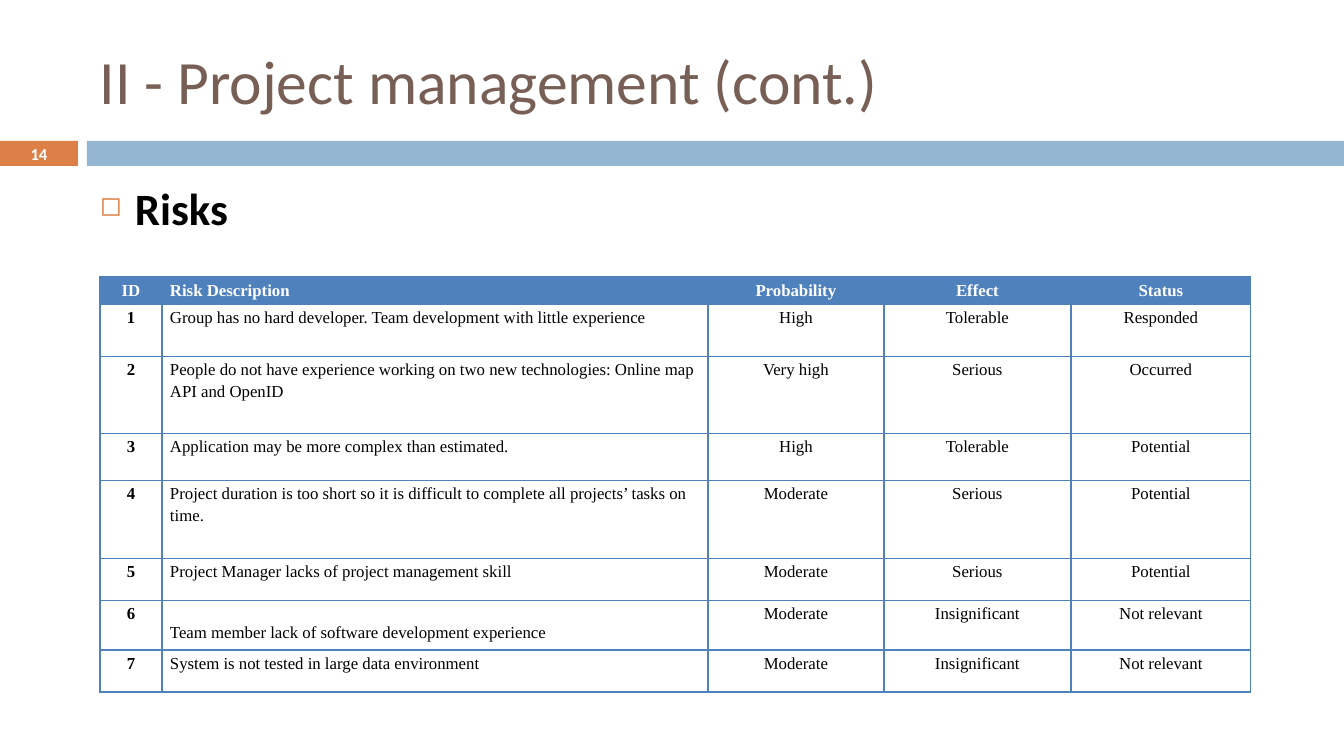
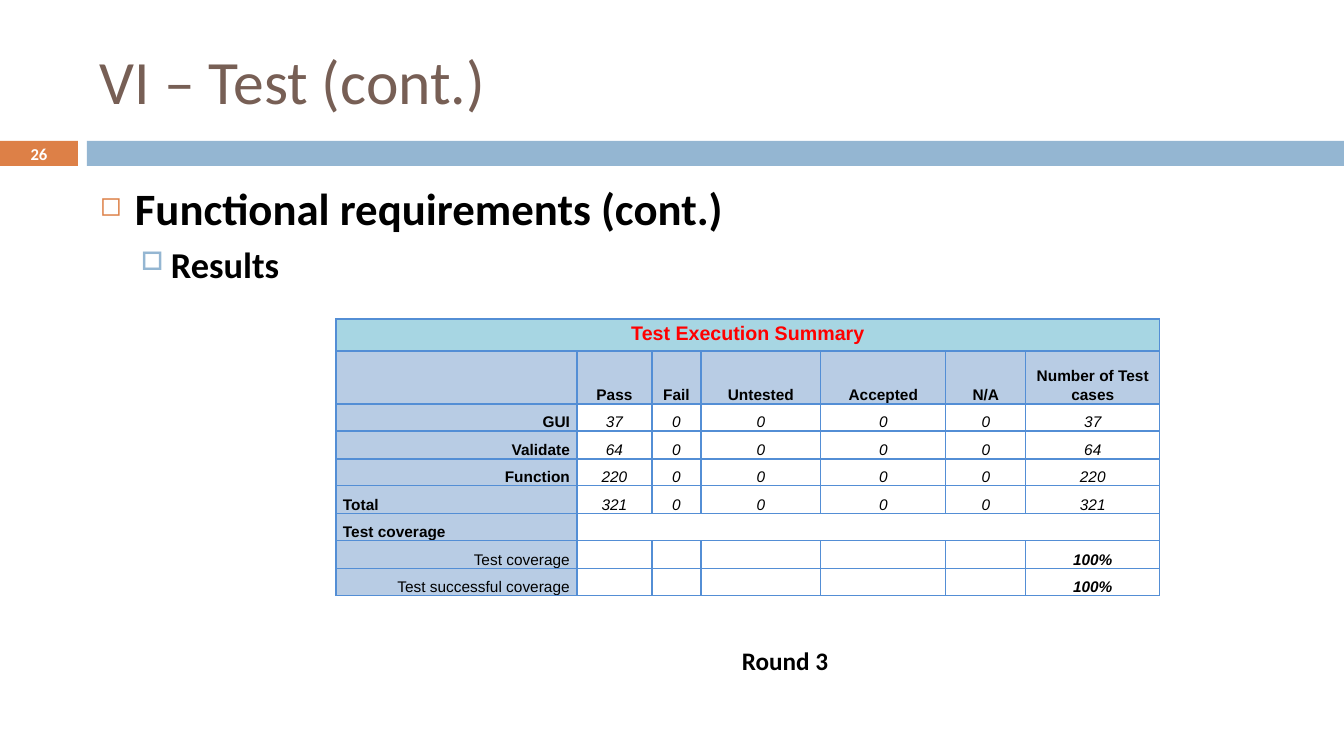
import pptx
import pptx.dml.color
import pptx.enum.shapes
import pptx.enum.text
import pptx.oxml
import pptx.oxml.ns
import pptx.util

EMU_PER_PX = 914400 / 100.8
WIDTH, HEIGHT = 1344, 756
ALIGN = pptx.enum.text.PP_ALIGN
ANCHOR = pptx.enum.text.MSO_ANCHOR

BROWN, ORANGE, BLUE = "775F55", "DD8047", "94B6D2"
BLACK, WHITE, RED = "000000", "FFFFFF", "FF0000"
RISK_BLUE = "4F81BD"
TEST_LINE, TEST_HEAD, TEST_LABEL = "538ED5", "A7D6E3", "B8CCE4"

BAND_TOP, BAND_HEIGHT = 141, 25
NUMBER_WIDTH, BAND_LEFT = 78, 87
TEXT_LEFT, TEXT_WIDTH = 90, 1199

# indent, hanging, space before, bullet, bullet colour, bullet size, text size
BULLETS = [
    (35, 35, 7, "◻", ORANGE, 60, 32),
    (71, 30, 5.5, "□", BLUE, 70, 26),
]

RISKS = [
    ("ID", "Risk Description", "Probability", "Effect", "Status"),
    ("1", "Group has no hard developer. Team development with little experience",
     "High", "Tolerable", "Responded"),
    ("2", "People do not have experience working on two new technologies: "
     "Online map API and OpenID", "Very high", "Serious", "Occurred"),
    ("3", "Application may be more complex than estimated.",
     "High", "Tolerable", "Potential"),
    ("4", "Project duration is too short so it is difficult to complete all "
     "projects’ tasks on time.", "Moderate", "Serious", "Potential"),
    ("5", "Project Manager lacks of project management skill",
     "Moderate", "Serious", "Potential"),
    ("6", "Team member lack of software development experience",
     "Moderate", "Insignificant", "Not relevant"),
    ("7", "System is not tested in large data environment",
     "Moderate", "Insignificant", "Not relevant"),
]
RISK_COLS = [62, 546, 176, 187, 180]
RISK_ROWS = [27, 52, 77, 47, 78, 42, 50, 42]
LOWERED_RISK = 6

TEST_HEADINGS = ["", "Pass", "Fail", "Untested", "Accepted", "N/A",
                 "Number of Test cases"]
# label, label alignment, label bold, values, values bold
TEST_RESULTS = [
    ("GUI", ALIGN.RIGHT, True, ["37", "0", "0", "0", "0", "37"], False),
    ("Validate", ALIGN.RIGHT, True, ["64", "0", "0", "0", "0", "64"], False),
    ("Function", ALIGN.RIGHT, True, ["220", "0", "0", "0", "0", "220"], False),
    ("Total", ALIGN.LEFT, True, ["321", "0", "0", "0", "0", "321"], False),
    ("Test coverage", ALIGN.LEFT, True, [""] * 6, False),
    ("Test coverage", ALIGN.RIGHT, False, [""] * 5 + ["100%"], True),
    ("Test successful coverage", ALIGN.RIGHT, False, [""] * 5 + ["100%"], True),
]
OPEN_RESULT = 4
TEST_COLS = [241, 75, 49, 120, 125, 80, 134]
TEST_ROWS = [32, 53] + [27, 28] * 3 + [27]


def px(n):
    return pptx.util.Emu(round(n * EMU_PER_PX))


def rgb(color):
    return pptx.dml.color.RGBColor.from_string(color)


def set_font(p, size, color, name="Calibri", bold=False, italic=False):
    p.font.size = pptx.util.Pt(size)
    p.font.name = name
    p.font.bold = bold
    p.font.italic = italic
    p.font.color.rgb = rgb(color)


def add_xml(parent, xml):
    head, tail = xml.split(">", 1) if not xml.endswith("/>") else (xml[:-2], "/>")
    end = tail if tail == "/>" else ">" + tail
    parent.append(pptx.oxml.parse_xml(f"{head} {pptx.oxml.ns.nsdecls('a')}{end}"))


def add_band(slide, left, width, color):
    sp = slide.shapes.add_shape(pptx.enum.shapes.MSO_SHAPE.RECTANGLE,
                                px(left), px(BAND_TOP), px(width), px(BAND_HEIGHT))
    sp.shadow.inherit = False
    sp.fill.solid()
    sp.fill.fore_color.rgb = rgb(color)
    sp.line.fill.background()


def add_textbox(slide, left, top, width, height, anchor=ANCHOR.TOP, wrap=True):
    tf = slide.shapes.add_textbox(px(left), px(top), px(width), px(height)).text_frame
    tf.word_wrap = wrap
    tf.vertical_anchor = anchor
    return tf


def add_bullet(p, text, level):
    indent, hanging, before, char, color, percent, size = BULLETS[level]
    p.text = text
    p.level = level
    p.space_before = pptx.util.Pt(before)
    pPr = p._p.get_or_add_pPr()
    pPr.set("marL", str(px(indent)))
    pPr.set("indent", str(-px(hanging)))
    add_xml(pPr, f'<a:buClr><a:srgbClr val="{color}"/></a:buClr>')
    add_xml(pPr, f'<a:buSzPct val="{percent * 1000}"/>')
    add_xml(pPr, f'<a:buChar char="{char}"/>')
    set_font(p, size, BLACK, bold=True)


def add_base_slide(prs, title, number, bullets):
    """Add a slide with the title, the numbered band and the bullet list."""
    slide = prs.slides.add_slide(prs.slide_layouts[6])
    add_band(slide, 0, NUMBER_WIDTH, ORANGE)
    add_band(slide, BAND_LEFT, WIDTH - BAND_LEFT, BLUE)

    p = add_textbox(slide, TEXT_LEFT, 25, TEXT_WIDTH, 109, ANCHOR.MIDDLE).paragraphs[0]
    p.text = title
    set_font(p, 44, BROWN)

    p = add_textbox(slide, 0, 140, NUMBER_WIDTH, 27, ANCHOR.MIDDLE).paragraphs[0]
    p.text = str(number)
    p.alignment = ALIGN.CENTER
    set_font(p, 11.9, WHITE, bold=True)

    tf = add_textbox(slide, TEXT_LEFT, 176, TEXT_WIDTH, 496)
    for level, text in enumerate(bullets):
        p = tf.paragraphs[0] if level == 0 else tf.add_paragraph()
        add_bullet(p, text, level)
    return slide


def add_table(slide, left, top, cols, rows):
    table = slide.shapes.add_table(len(rows), len(cols), px(left), px(top),
                                   px(sum(cols)), px(sum(rows))).table
    table.first_row = table.horz_banding = False
    for column, width in zip(table.columns, cols):
        column.width = px(width)
    for row, height in zip(table.rows, rows):
        row.height = px(height)
    return table


def set_borders(cell, color, sides):
    """Draw 1 pt borders on the sides named by letters of LRTB, none elsewhere."""
    tcPr = cell._tc.get_or_add_tcPr()
    for side in "LRTB":
        fill = (f'<a:solidFill><a:srgbClr val="{color}"/></a:solidFill>'
                if side in sides else "<a:noFill/>")
        add_xml(tcPr, f'<a:ln{side} w="12700">{fill}</a:ln{side}>')


def set_cell(cell, text, border, fill=None, align=ALIGN.CENTER, anchor=ANCHOR.TOP,
             margins=(0, 0), sides="LRTB", **font):
    """Fill one cell; margins are (side, top and bottom) in px."""
    set_borders(cell, border, sides)
    if fill:
        cell.fill.solid()
        cell.fill.fore_color.rgb = rgb(fill)
    else:
        cell.fill.background()
    cell.margin_left = cell.margin_right = px(margins[0])
    cell.margin_top = cell.margin_bottom = px(margins[1])
    cell.vertical_anchor = anchor
    p = cell.text_frame.paragraphs[0]
    p.text = text
    p.alignment = align
    p.line_spacing = 1.15
    set_font(p, **font)


def add_risk_table(slide):
    table = add_table(slide, 100, 277, RISK_COLS, RISK_ROWS)
    for i, row in enumerate(RISKS):
        header = i == 0
        for j, text in enumerate(row):
            set_cell(table.cell(i, j), text, RISK_BLUE,
                     fill=RISK_BLUE if header else None,
                     align=ALIGN.LEFT if j == 1 else ALIGN.CENTER,
                     margins=(8, 2), size=12, name="Times New Roman",
                     color=WHITE if header else BLACK, bold=header or j == 0)
    table.cell(LOWERED_RISK, 1).margin_top = px(21)


def add_test_table(slide):
    table = add_table(slide, 336, 319, TEST_COLS, TEST_ROWS)
    last = len(TEST_COLS) - 1
    shared = dict(border=TEST_LINE, margins=(7, 0), name="Arial")
    body = dict(shared, anchor=ANCHOR.BOTTOM, size=11, color=BLACK)

    table.cell(0, 0).merge(table.cell(0, last))
    for j in range(last + 1):
        set_cell(table.cell(0, j), "" if j else "Test Execution Summary",
                 fill=TEST_HEAD, size=14, color=RED, bold=True, **shared)
        set_cell(table.cell(1, j), TEST_HEADINGS[j], fill=TEST_LABEL, bold=True, **body)

    for i, (label, align, label_bold, values, bold) in enumerate(TEST_RESULTS):
        set_cell(table.cell(i + 2, 0), label, fill=TEST_LABEL, align=align,
                 bold=label_bold, **body)
        for j, value in enumerate(values, 1):
            sides = "LRTB"
            if i == OPEN_RESULT:
                sides = "TB" + "L" * (j == 1) + "R" * (j == last)
            set_cell(table.cell(i + 2, j), value, fill=WHITE, sides=sides,
                     bold=bold, italic=True, **body)


def add_caption(slide, text):
    tf = add_textbox(slide, 732, 640, 108, 40, wrap=False)
    tf.auto_size = pptx.enum.text.MSO_AUTO_SIZE.SHAPE_TO_FIT_TEXT
    tf.text = text
    set_font(tf.paragraphs[0], 18, BLACK, bold=True)


def main():
    prs = pptx.Presentation()
    prs.slide_width, prs.slide_height = px(WIDTH), px(HEIGHT)

    slide = add_base_slide(prs, "II - Project management (cont.)", 14, ["Risks"])
    add_risk_table(slide)

    slide = add_base_slide(prs, "VI – Test (cont.)", 26,
                           ["Functional requirements (cont.)", "Results"])
    add_test_table(slide)
    add_caption(slide, "Round 3")

    prs.save("out.pptx")


if __name__ == "__main__":
    main()
